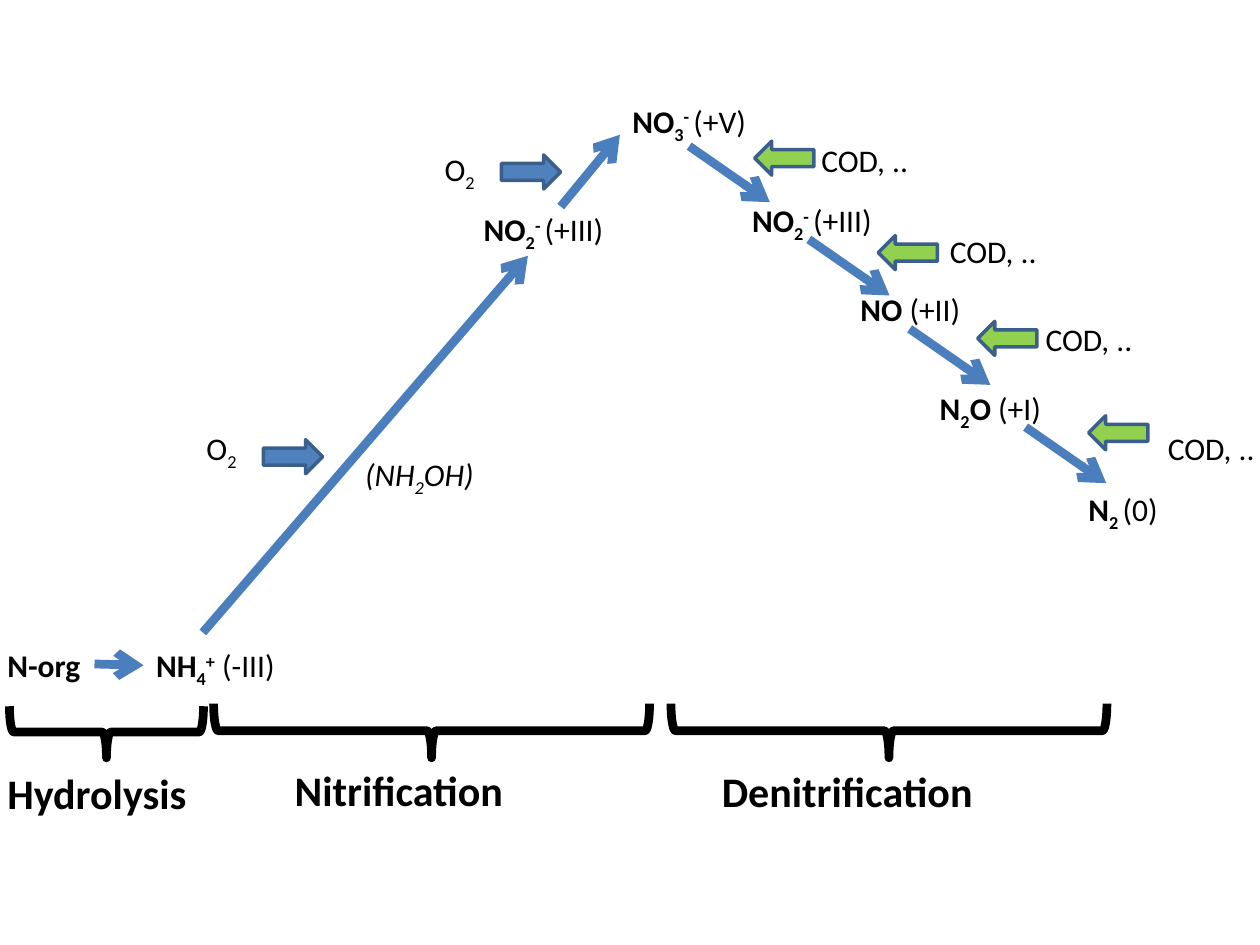
from dataclasses import dataclass

from lxml import etree
from pptx import Presentation
from pptx.dml.color import RGBColor
from pptx.enum.shapes import MSO_CONNECTOR, MSO_SHAPE
from pptx.enum.text import MSO_AUTO_SIZE
from pptx.oxml.ns import qn
from pptx.util import Inches, Pt

STRAIGHT = MSO_CONNECTOR.STRAIGHT
RIGHT_ARROW = MSO_SHAPE.RIGHT_ARROW
RIGHT_BRACE = MSO_SHAPE.RIGHT_BRACE
FIT_TEXT = MSO_AUTO_SIZE.SHAPE_TO_FIT_TEXT

SLIDE_WIDTH, SLIDE_HEIGHT = Inches(10), Inches(7.5)
COLUMNS, ROWS = 100, 75
BASELINES = {"_": "-25000", "^": "30000"}


@dataclass(frozen=True)
class Theme:
    """Colours, font, type sizes and line widths of the slide."""
    font: str = "Calibri"
    ink: RGBColor = RGBColor(0x00, 0x00, 0x00)
    reaction: RGBColor = RGBColor(0x4B, 0x7E, 0xBC)
    oxygen: RGBColor = RGBColor(0x4F, 0x81, 0xBD)
    carbon: RGBColor = RGBColor(0x92, 0xD0, 0x50)
    outline: RGBColor = RGBColor(0x3A, 0x5F, 0x8C)
    label_size: int = 18
    stage_size: int = 24
    thick: int = 5
    thin: int = 2


THEME = Theme()

NITRITE = [("NO", "b"), ("2", "b_"), ("- ", "b^"), ("(+III)", "")]
COMPOUNDS = [
    (-0.4, 50.8, [("N-org", "b")]),
    (11.4, 50.8, [("NH", "b"), ("4", "b_"), ("+", "b^"), (" (-III)", "")]),
    (28, 35.6, [("(NH", "i"), ("2", "i_"), ("OH)", "i")]),
    (37.4, 16.2, NITRITE),
    (49.2, 7.6, [("NO", "b"), ("3", "b_"), ("- ", "b^"), ("(+V)", "")]),
    (58.7, 15.5, NITRITE),
    (67.3, 22.5, [("NO ", "b"), ("(+II)", "")]),
    (73.6, 30.4, [("N", "b"), ("2", "b_"), ("O", "b"), (" (+I)", "")]),
    (85.4, 38.4, [("N", "b"), ("2 ", "b_"), ("(0)", "")]),
]
OXIDATIONS = [
    ((7.5, 52.7), (11.4, 52.8)),
    ((16.1, 50.2), (41.9, 20.3)),
    ((44.5, 16.4), (49.2, 10.7)),
]
REDUCTION_STARTS = [(54.7, 11.6), (64.2, 19), (72.2, 26.1), (81.4, 33.9)]
REDUCTION_STEP = (6.4, 4.45)
OXYGEN_INPUTS = [((15.4, 33.6), (20.9, 34.9)), ((34.3, 11.4), (39.8, 12.3))]
CARBON_INPUTS = [
    ((64.2, 10.7), (59.9, 11.2)),
    ((74.4, 17.9), (69.7, 18.7)),
    ((82, 24.9), (77.6, 25.5)),
    ((91.7, 33.6), (86.4, 33)),
]
STAGES = [
    ("Hydrolysis", (-0.4, 60.4), 28.4, (0.75, 56.05), 15.4, 4.1),
    ("Nitrification", (22.4, 60.2), 28.4, (16.95, 55.85), 34.6, 4.3),
    ("Denitrification", (56.3, 60.3), 40.9, (53.25, 55.85), 34.6, 4.3),
]


def across(columns):
    """Turn grid columns into a length."""
    return round(SLIDE_WIDTH * columns / COLUMNS)


def down(rows):
    """Turn grid rows into a length."""
    return round(SLIDE_HEIGHT * rows / ROWS)


def add_text(slide, left, top, runs, width=11.8, height=4, size=THEME.label_size):
    """Add a one-line text box; run flags are b, i, _ (sub) and ^ (super)."""
    box = slide.shapes.add_textbox(across(left), down(top), across(width), down(height))
    frame = box.text_frame
    frame.word_wrap = True
    frame.auto_size = FIT_TEXT
    paragraph = frame.paragraphs[0]
    for text, flags in runs:
        run = paragraph.add_run()
        run.text = text
        run.font.name = THEME.font
        run.font.size = Pt(size)
        run.font.color.rgb = THEME.ink
        run.font.bold = "b" in flags
        run.font.italic = "i" in flags
        for flag in BASELINES.keys() & set(flags):
            run.font._element.set("baseline", BASELINES[flag])


def add_reaction(slide, start, end):
    """Add a thick arrow from one compound to the next."""
    connector = slide.shapes.add_connector(
        STRAIGHT, across(start[0]), down(start[1]), across(end[0]), down(end[1]))
    connector.line.color.rgb = THEME.reaction
    connector.line.width = Pt(THEME.thick)
    outline = connector.line._get_or_add_ln()
    etree.SubElement(outline, qn("a:tailEnd"), type="arrow")
    etree.SubElement(connector._element.spPr, qn("a:effectLst"))


def add_input_arrow(slide, left, top, color, rotation=0):
    """Add a block arrow that marks a substance being supplied."""
    arrow = slide.shapes.add_shape(
        RIGHT_ARROW, across(left), down(top), across(4.7), down(2.7))
    arrow.rotation = rotation
    arrow.shadow.inherit = False
    arrow.fill.solid()
    arrow.fill.fore_color.rgb = color
    arrow.line.color.rgb = THEME.outline
    arrow.line.width = Pt(THEME.thin)


def add_brace(slide, left, top, span, depth):
    """Add a brace that opens upwards over the given span."""
    shift = (span - depth) / 2
    brace = slide.shapes.add_shape(
        RIGHT_BRACE, across(left + shift), down(top - shift), across(depth), down(span))
    brace.rotation = 90
    brace.shadow.inherit = False
    brace.fill.background()
    brace.line.color.rgb = THEME.ink
    brace.line.width = Pt(THEME.thick)


def main():
    """Build the nitrogen conversion slide."""
    presentation = Presentation()
    presentation.slide_width, presentation.slide_height = SLIDE_WIDTH, SLIDE_HEIGHT
    slide = presentation.slides.add_slide(presentation.slide_layouts[6])

    for left, top, runs in COMPOUNDS:
        add_text(slide, left, top, runs, width=14.2 if top < 10 else 11.8)
    for start, end in OXIDATIONS:
        add_reaction(slide, start, end)
    for column, row in REDUCTION_STARTS:
        add_reaction(slide, (column, row),
                     (column + REDUCTION_STEP[0], row + REDUCTION_STEP[1]))
    for label, arrow in OXYGEN_INPUTS:
        add_text(slide, *label, [("O", ""), ("2", "_")])
        add_input_arrow(slide, *arrow, THEME.oxygen)
    for label, arrow in CARBON_INPUTS:
        add_text(slide, *label, [("COD, ..", "")])
        add_input_arrow(slide, *arrow, THEME.carbon, rotation=180)
    for name, label, width, corner, span, depth in STAGES:
        add_brace(slide, *corner, span, depth)
        add_text(slide, *label, [(name, "b")], width=width, height=5,
                 size=THEME.stage_size)

    presentation.save("out.pptx")


if __name__ == "__main__":
    main()
